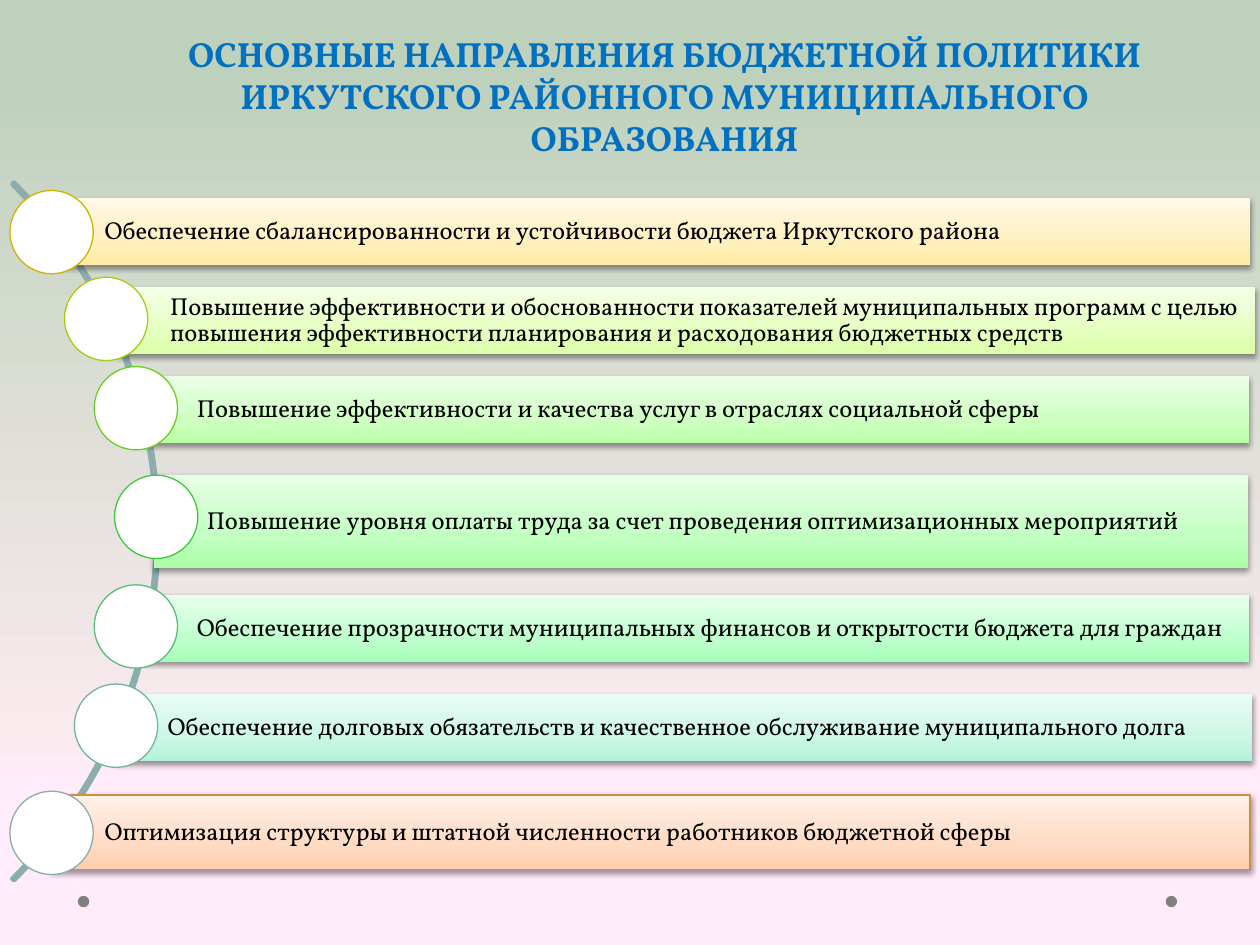
from copy import deepcopy
from dataclasses import dataclass

from lxml import etree
from pptx import Presentation
from pptx.dml.color import RGBColor
from pptx.enum import shapes, text
from pptx.oxml import ns
from pptx.util import Cm, Pt


@dataclass(frozen=True)
class Theme:
    font: str = "Vollkorn"
    title_size: float = 20
    body_size: float = 14
    title: str = "0070C0"
    body: str = "000000"
    shadow: str = "000000"
    arc: str = "8CADAE"
    dot: str = "808080"
    circle: str = "FFFFFF"
    background: tuple = ((0.17, "FFEBFA"), (0.23, "F9EAEE"), (0.93, "BED1BC"))
    bar_positions: tuple = (0, 0.35, 1)


@dataclass(frozen=True)
class Direction:
    wording: str
    bar: tuple
    circle: tuple
    gradient: tuple
    circle_line: str
    bar_line: str = ""


THEME = Theme()
CIRCLE_SIZE = 1.68
DOT_SIZE = 0.23
TITLE = ("ОСНОВНЫЕ НАПРАВЛЕНИЯ БЮДЖЕТНОЙ ПОЛИТИКИ ИРКУТСКОГО РАЙОННОГО "
         "МУНИЦИПАЛЬНОГО ОБРАЗОВАНИЯ")
DIRECTIONS = (
    Direction("Обеспечение сбалансированности и устойчивости бюджета Иркутского района",
              (1.04, 3.99, 24.16, 1.35), (0.2, 3.84),
              ("FFEBA5", "FFF0BF", "FFF9E7"), "CCB400"),
    Direction("Повышение эффективности и обоснованности показателей муниципальных программ "
              "с целью повышения эффективности планирования и расходования бюджетных средств",
              (2.36, 5.79, 22.94, 1.35), (1.3, 5.59),
              ("DBFFA6", "E5FFC0", "F5FFE7"), "A1CF0F"),
    Direction("Повышение эффективности и качества услуг в отраслях социальной сферы",
              (2.9, 7.59, 22.28, 1.35), (1.9, 7.39),
              ("BAFFA7", "CEFFC1", "ECFFE7"), "67D021"),
    Direction("Повышение уровня оплаты труда за счет проведения оптимизационных мероприятий",
              (3.1, 9.58, 22.07, 1.88), (2.31, 9.58),
              ("A9FFA7", "C2FFC1", "E8FFE7"), "3ECB38"),
    Direction("Обеспечение прозрачности муниципальных финансов и открытости бюджета для граждан",
              (2.9, 11.99, 22.28, 1.35), (1.9, 11.79),
              ("A6FFBA", "C0FFCE", "E7FFEC"), "56BF77"),
    Direction("Обеспечение долговых обязательств и качественное обслуживание муниципального долга",
              (2.31, 14, 22.94, 1.35), (1.5, 13.79),
              ("B4F3DB", "CAF6E5", "EAFCF5"), "72B59F"),
    Direction("Оптимизация структуры и штатной численности работников бюджетной сферы",
              (1.04, 16.03, 24.16, 1.5), (0.2, 15.95),
              ("FFCDAC", "FFDBC4", "FFF1E8"), "8CADAE", "D08D44"),
)


def color(value):
    return RGBColor.from_string(value)


def apply_gradient(fill, element, stops):
    fill.gradient()
    fill.gradient_angle = 90
    stop_list = next(element.iter(ns.qn("a:gsLst")))
    stop_list.append(deepcopy(stop_list[-1]))
    for stop, (position, value) in zip(fill.gradient_stops, stops):
        stop.position = position
        stop.color.rgb = color(value)


def add_shape(slide, kind, box, fill="", line="", line_width=0.75):
    shape = slide.shapes.add_shape(kind, *map(Cm, box))
    shape.shadow.inherit = False
    if fill:
        shape.fill.solid()
        shape.fill.fore_color.rgb = color(fill)
    else:
        shape.fill.background()
    if line:
        shape.line.color.rgb = color(line)
        shape.line.width = Pt(line_width)
    else:
        shape.line.fill.background()
    return shape


def add_shadow(shape):
    effects = shape._element.spPr.find(ns.qn("a:effectLst"))
    shadow = etree.SubElement(effects, ns.qn("a:outerShdw"), blurRad="40000",
                              dist="20000", dir="5400000", rotWithShape="0")
    shade = etree.SubElement(shadow, ns.qn("a:srgbClr"), val=THEME.shadow)
    etree.SubElement(shade, ns.qn("a:alpha"), val="38000")


def write(shape, wording, size, value, alignment, bold=False):
    frame = shape.text_frame
    frame.word_wrap = True
    frame.text = wording
    paragraph = frame.paragraphs[0]
    paragraph.alignment = alignment
    font = paragraph.runs[0].font
    font.name = THEME.font
    font.size = Pt(size)
    font.bold = bold
    font.color.rgb = color(value)
    return frame


def add_direction(slide, direction):
    bar = add_shape(slide, shapes.MSO_SHAPE.RECTANGLE, direction.bar, line=direction.bar_line)
    apply_gradient(bar.fill, bar._element, zip(THEME.bar_positions, direction.gradient))
    add_shadow(bar)
    frame = write(bar, direction.wording, THEME.body_size, THEME.body, text.PP_ALIGN.LEFT)
    frame.vertical_anchor = text.MSO_ANCHOR.MIDDLE
    frame.margin_left = Cm(1.07)
    frame.margin_top = frame.margin_right = frame.margin_bottom = Cm(0.1)
    frame.paragraphs[0].line_spacing = 0.9
    add_shape(slide, shapes.MSO_SHAPE.OVAL, (*direction.circle, CIRCLE_SIZE, CIRCLE_SIZE),
              THEME.circle, direction.circle_line)


def add_arc(slide):
    arc = add_shape(slide, shapes.MSO_SHAPE.BLOCK_ARC, (-16.71, 0.76, 19.91, 19.91),
                    line=THEME.arc, line_width=2.25)
    for index, value in enumerate((189, 27, 0.003)):
        arc.adjustments[index] = value


def add_title(slide):
    box = slide.shapes.add_textbox(Cm(3.5), Cm(0.53), Cm(19.8), Cm(2.82))
    frame = write(box, TITLE, THEME.title_size, THEME.title, text.PP_ALIGN.CENTER, bold=True)
    frame.auto_size = text.MSO_AUTO_SIZE.SHAPE_TO_FIT_TEXT


def main():
    presentation = Presentation()
    presentation.slide_width, presentation.slide_height = Cm(25.4), Cm(19.05)
    slide = presentation.slides.add_slide(presentation.slide_layouts[6])
    apply_gradient(slide.background.fill, slide._element, THEME.background)
    for left in (23.5, 1.57):
        add_shape(slide, shapes.MSO_SHAPE.OVAL, (left, 18.06, DOT_SIZE, DOT_SIZE), THEME.dot)
    add_arc(slide)
    for direction in DIRECTIONS:
        add_direction(slide, direction)
    add_title(slide)
    presentation.save("out.pptx")


if __name__ == "__main__":
    main()
